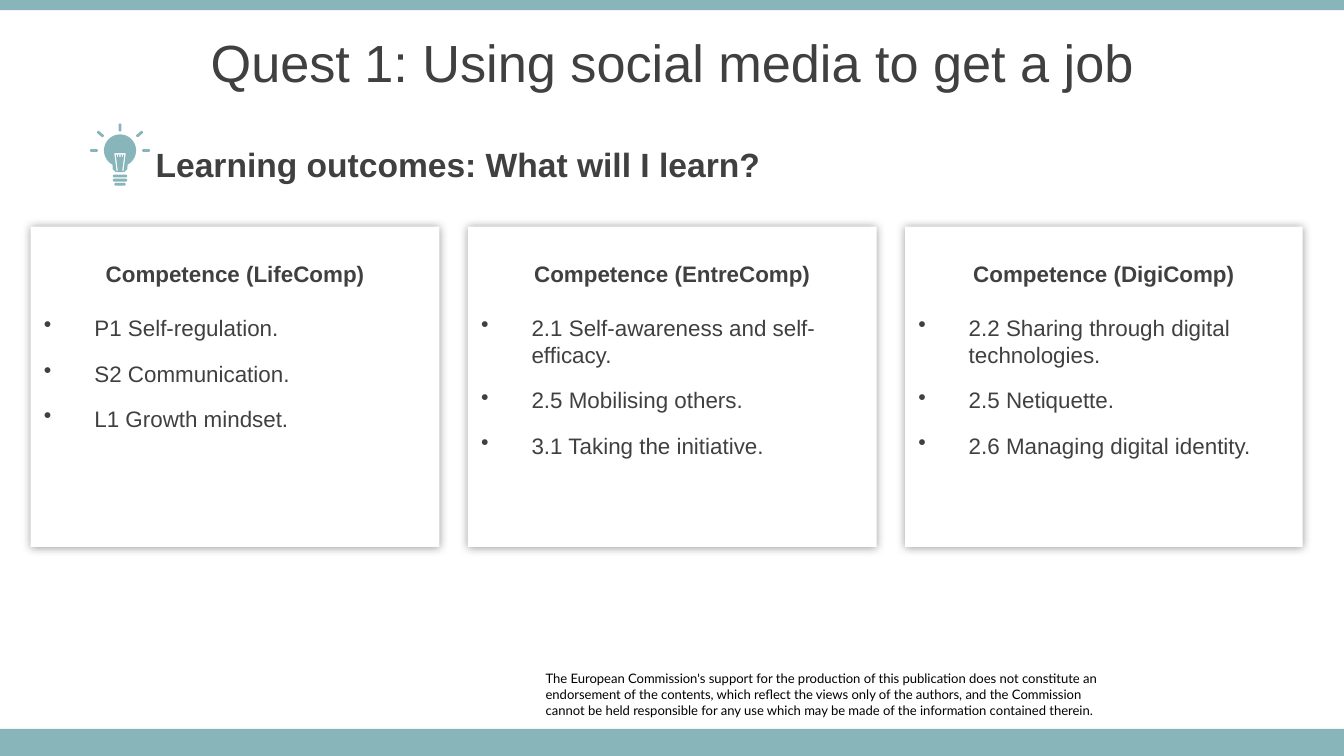
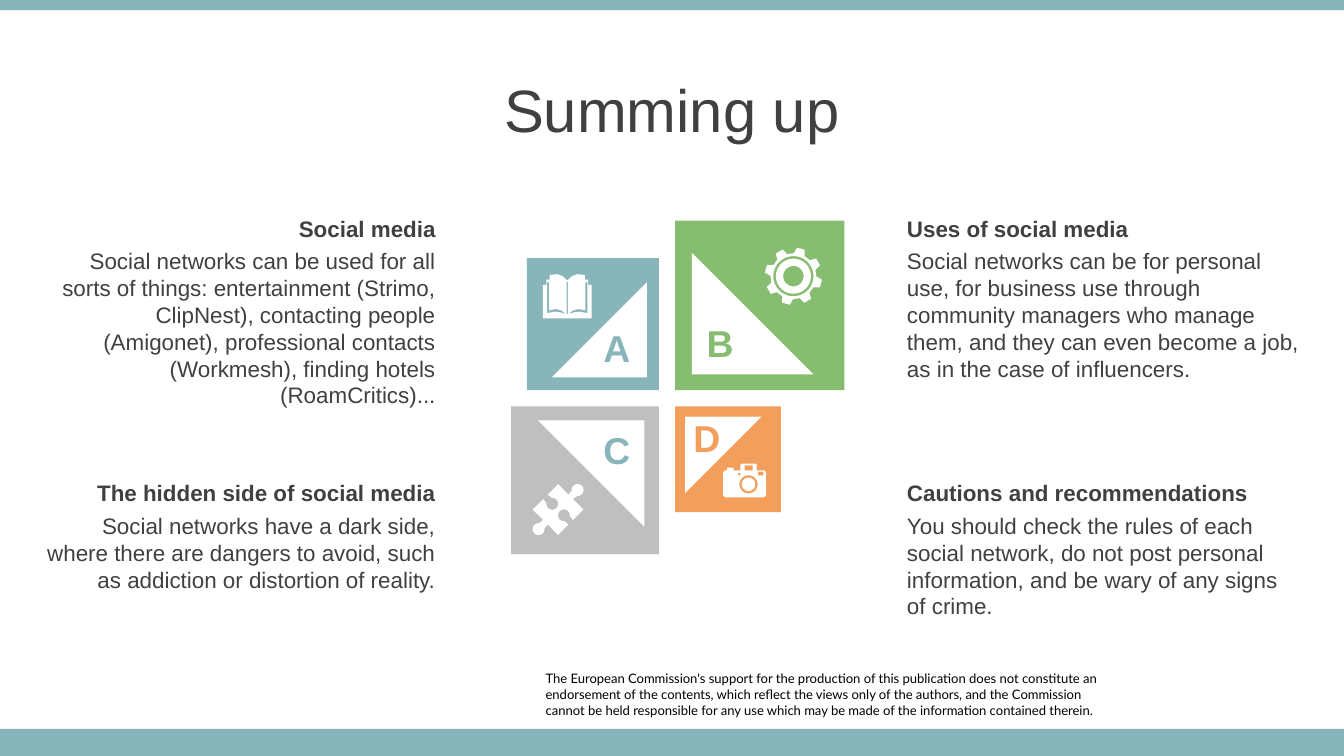
from math import cos, radians, sin

from lxml.etree import SubElement
from pptx import Presentation
from pptx.dml.color import RGBColor
from pptx.enum.shapes import MSO_SHAPE
from pptx.enum.text import MSO_ANCHOR, PP_ALIGN
from pptx.oxml.ns import qn
from pptx.util import Pt

TEAL = RGBColor(0x87, 0xB5, 0xBA)
GREEN = RGBColor(0x86, 0xBD, 0x70)
ORANGE = RGBColor(0xF3, 0x9E, 0x5A)
SILVER = RGBColor(0xBF, 0xBF, 0xBF)
WHITE = RGBColor(0xFF, 0xFF, 0xFF)
BLACK = RGBColor(0, 0, 0)
INK = RGBColor(0x40, 0x40, 0x40)


def polar(cx, cy, radius, *angles):
    """Points around a centre, angles in degrees clockwise from the right."""
    return [(cx + radius * cos(radians(a)), cy + radius * sin(radians(a))) for a in angles]


def add_icon(slide, outlines, colour):
    """One filled shape; an outline inside another one cuts a hole."""
    outlines = [[(Pt(x), Pt(y)) for x, y in outline] for outline in outlines]
    builder = slide.shapes.build_freeform(*outlines[0][0])
    for outline in outlines:
        builder.move_to(*outline[0])
        builder.add_line_segments(outline[1:], close=True)
    icon = builder.convert_to_shape()
    icon.shadow.inherit = False
    icon.fill.solid()
    icon.fill.fore_color.rgb = colour
    icon.line.fill.background()


prs = Presentation()
prs.slide_width, prs.slide_height = Pt(720), Pt(405)
layout = prs.slide_layouts[5]
for placeholder in list(layout.placeholders)[1:]:
    placeholder.element.getparent().remove(placeholder.element)

# Slides and titles
slides = []
for heading, size, top in [("Quest 1: Using social media to get a job", 28, 10),
                           ("Summing up", 32, 35.3)]:
    slide = prs.slides.add_slide(layout)
    title = slide.shapes.title
    title.left, title.top, title.width, title.height = 0, Pt(top), Pt(720), Pt(45.5)
    title.text_frame.text = heading
    title.text_frame.vertical_anchor = MSO_ANCHOR.MIDDLE
    line = title.text_frame.paragraphs[0]
    line.alignment = PP_ALIGN.CENTER
    line.font.name, line.font.size = "Arial", Pt(size)
    line.font.color.rgb = INK
    slides.append(slide)
outcomes, summary = slides

# Bands and disclaimer, shared through the layout
disclaimer = outcomes.shapes.add_textbox(Pt(292.3), Pt(359.3), Pt(300), Pt(25.2))
frame = disclaimer.text_frame
frame.word_wrap = True
frame.margin_left = frame.margin_top = frame.margin_right = frame.margin_bottom = 0
frame.text = (
    "The European Commission's support for the production of this publication does not "
    "constitute an endorsement of the contents, which reflect the views only of the authors, "
    "and the Commission\n"
    "cannot be held responsible for any use which may be made of the information "
    "contained therein.")
for line in frame.paragraphs:
    line.font.name, line.font.size = "Lato", Pt(7)
    line.font.color.rgb = BLACK
shared = [disclaimer]
for top, height in [(390.5, 14.5), (0, 5.5)]:
    band = outcomes.shapes.add_shape(MSO_SHAPE.RECTANGLE, 0, Pt(top), Pt(720), Pt(height))
    band.shadow.inherit = False
    band.fill.solid()
    band.fill.fore_color.rgb = TEAL
    band.line.fill.background()
    shared.append(band)
for part in shared:
    layout.shapes.element.append(part.element)

# Slide 1: light bulb
circle = range(0, 360, 12)
bulb_x, bulb_y = 64.3, 80.6
head = polar(bulb_x, bulb_y, 8.6, *range(118, 423, 8)) + [
    (68.3, 90.5), (66.5, 92.2), (62, 92.2), (60.3, 90.5)]
filament = [(61.2, 82.1), (62.5, 92), (63.1, 91.5), (62, 82.8)]
for x in (62.6, 64, 65.4):
    filament += [(x, 82.8), (x, 84.2), (x + 0.6, 84.2), (x + 0.6, 82.8)]
filament += [(66.6, 82.8), (65.5, 91.5), (66.1, 92), (67.4, 82.1)]
strokes = [(61.2, 94.3, 0, 6.2), (61.2, 96.5, 0, 6.2), (62, 98.7, 0, 4.6)]
for angle, distance in [(180, 12.6), (220, 12.3), (270, 10.9), (320, 12.3), (0, 12.6)]:
    strokes.append((*polar(bulb_x, bulb_y, distance, angle)[0], angle, 2.8))
bulb = [head, filament]
for x, y, angle, length in strokes:
    tip_x, tip_y = polar(x, y, length, angle)[0]
    bulb.append(polar(tip_x, tip_y, 0.75, *range(angle - 90, angle + 91, 30))
                + polar(x, y, 0.75, *range(angle + 90, angle + 271, 30)))
add_icon(outcomes, bulb, TEAL)

subheading = outcomes.shapes.add_textbox(Pt(76.3), Pt(77), Pt(351.4), Pt(22.3))
subheading.text_frame.word_wrap = True
subheading.text_frame.vertical_anchor = MSO_ANCHOR.MIDDLE
subheading.text_frame.text = "Learning outcomes: What will I learn?"
line = subheading.text_frame.paragraphs[0]
line.font.name, line.font.size, line.font.bold = "Arial", Pt(18), True
line.font.color.rgb = INK

# Slide 1: competence cards
competences = [
    ("Competence (LifeComp)", 219,
     ["P1 Self-regulation.", "S2 Communication.", "L1 Growth mindset."]),
    ("Competence (EntreComp)", 219,
     ["2.1 Self-awareness and self-efficacy.", "2.5 Mobilising others.",
      "3.1 Taking the initiative."]),
    ("Competence (DigiComp)", 213,
     ["2.2 Sharing through digital technologies.", "2.5 Netiquette.",
      "2.6 Managing digital identity."]),
]
for column, (framework, width, skills) in enumerate(competences):
    card = outcomes.shapes.add_shape(MSO_SHAPE.RECTANGLE, Pt(16.5 + 234.2 * column),
                                     Pt(121.5), Pt(width), Pt(171.5))
    card.fill.solid()
    card.fill.fore_color.rgb = WHITE
    card.line.fill.background()
    card.shadow.inherit = False
    effects = card.element.spPr.find(qn("a:effectLst"))
    glow = SubElement(effects, qn("a:outerShdw"), blurRad=str(Pt(5)), dist="0", dir="0",
                      algn="ctr", rotWithShape="0")
    tint = SubElement(glow, qn("a:srgbClr"), val="000000")
    SubElement(tint, qn("a:alpha"), val="40000")

    frame = card.text_frame
    frame.word_wrap = True
    frame.vertical_anchor = MSO_ANCHOR.TOP
    frame.margin_top = Pt(18)
    frame.text = "\n".join([framework, *skills])
    for row, line in enumerate(frame.paragraphs):
        if row == 0:
            line.alignment = PP_ALIGN.CENTER
            line.space_after = Pt(14.4)
        else:
            line.alignment = PP_ALIGN.LEFT
            line.space_after = Pt(10)
            properties = line._p.get_or_add_pPr()
            properties.set("marL", str(Pt(27)))
            properties.set("indent", str(Pt(-27)))
            SubElement(properties, qn("a:buChar"), char="•")
        line.font.name, line.font.size, line.font.bold = "Arial", Pt(12), row == 0
        line.font.color.rgb = INK

# Slide 2: four tiles around a cross-shaped gap, each with a white corner and a letter
tiles = [
    # letter, left side, upper side, size, colour, corner (x, y, size, turn), letter (x, y, colour)
    ("A", True, True, 70.7, TEAL, (295.5, 151.2, 51, 270), (314.6, 170.6, TEAL)),
    ("B", False, True, 90.7, GREEN, (370.7, 135.4, 65.2, 0), (370, 167.8, GREEN)),
    ("C", True, False, 79.2, SILVER, (288.2, 225.2, 57, 180), (314.6, 225.4, TEAL)),
    ("D", False, False, 56.7, ORANGE, (367, 223.2, 41, 90), (362.9, 218.9, ORANGE)),
]
for letter, on_left, on_top, size, colour, corner, (x, y, letter_colour) in tiles:
    left = 353 - size if on_left else 361.7
    top = 209 - size if on_top else 217.7
    for outline, (px, py, side, turn), fill in [
            (MSO_SHAPE.RECTANGLE, (left, top, size, 0), colour),
            (MSO_SHAPE.RIGHT_TRIANGLE, corner, WHITE)]:
        piece = summary.shapes.add_shape(outline, Pt(px), Pt(py), Pt(side), Pt(side))
        piece.rotation = turn
        piece.shadow.inherit = False
        piece.fill.solid()
        piece.fill.fore_color.rgb = fill
        piece.line.fill.background()
    label = summary.shapes.add_textbox(Pt(x), Pt(y), Pt(31.7), Pt(31.7))
    label.text_frame.word_wrap = True
    label.text_frame.text = letter
    line = label.text_frame.paragraphs[0]
    line.alignment = PP_ALIGN.CENTER
    line.font.name, line.font.size, line.font.bold = "Arial", Pt(20), True
    line.font.color.rgb = letter_colour

# Slide 2: book, mirrored about its spine
spine = 303.9
half_cover = [(0.3, 150), (2.5, 148), (5.5, 146.9), (9.5, 147.4), (9.5, 149.8), (11.2, 149.8),
              (11.2, 152.6), (13, 152.6), (13, 170.6)]
page_edge = [(10.8, 151.2), (9.7, 151.2), (9.7, 166.3), (6, 165.6), (3, 166.4), (0.6, 168.3),
             (3.5, 167.4), (6.5, 167), (10.8, 167.8)]
book = [[(spine + x, y) for x, y in half_cover] + [(spine - x, y) for x, y in half_cover[::-1]],
        [(spine - 0.3, 151), (spine + 0.3, 151), (spine + 0.3, 168.3), (spine - 0.3, 168.3)]]
for side in (1, -1):
    book.append([(spine + side * x, y) for x, y in page_edge])
add_icon(summary, book, WHITE)

# Slide 2: puzzle piece, with knobs on two edges and dents in the others
piece_x, piece_y = 299, 273
puzzle = []
for angle, knob in [(-45, True), (45, False), (135, True), (225, False)]:
    bulge = polar(piece_x, piece_y, 14.8 if knob else 4.4, angle)[0]
    sweep = (range(angle - 140, angle + 141, 20) if knob
             else range(angle - 40, angle - 321, -20))
    puzzle += polar(piece_x, piece_y, 13.6, angle - 45)
    puzzle += polar(piece_x, piece_y, 9.7, angle - 10)
    puzzle += polar(*bulge, 3.2, *sweep)
    puzzle += polar(piece_x, piece_y, 9.7, angle + 10)
add_icon(summary, [puzzle], WHITE)

# Slide 2: gear
gear_x, gear_y = 425.1, 148
teeth = []
for angle in range(-75, 285, 45):
    teeth += polar(gear_x, gear_y, 12.3, angle - 14)
    teeth += polar(gear_x, gear_y, 15.4, angle - 8, angle + 8)
    teeth += polar(gear_x, gear_y, 12.3, angle + 14)
add_icon(summary, [teeth] + [polar(gear_x, gear_y, r, *circle) for r in (10.8, 9.4, 5.5)], WHITE)

# Slide 2: camera
body = [(388.4, 252), (389.5, 252), (389.5, 250.6), (393.1, 250.6), (393.1, 252), (396.7, 252),
        (396.7, 248.9), (397.2, 248.4), (404.9, 248.4), (405.4, 248.9), (405.4, 252),
        (409.4, 252), (410.4, 253), (410.4, 265.4), (409.4, 266.4), (388.4, 266.4),
        (387.4, 265.4), (387.4, 253)]
camera = [body]
for left, top, right, bottom in [(398.9, 249.3, 403.2, 252), (406.1, 252.7, 409, 254.7),
                                 (395.3, 253.4, 396.7, 254.7)]:
    camera.append([(left, top), (right, top), (right, bottom), (left, bottom)])
camera += [polar(401, 259.5, r, *circle) for r in (4.9, 3.6)]
add_icon(summary, camera, WHITE)

# Slide 2: captions
captions = [
    (20.2, 111.6, 220.3, 94.3, PP_ALIGN.RIGHT, "Social media",
     "Social networks can be used for all sorts of things: entertainment (Strimo, ClipNest), "
     "contacting people (Amigonet), professional contacts (Workmesh), finding hotels "
     "(RoamCritics)..."),
    (14.4, 253.4, 226.1, 51.1, PP_ALIGN.RIGHT, "The hidden side of social media",
     "Social networks have a dark side, where there are dangers to avoid, such as addiction "
     "or distortion of reality."),
    (478.8, 111.6, 226.8, 79.9, PP_ALIGN.LEFT, "Uses of social media",
     "Social networks can be for personal use, for business use through community managers "
     "who manage them, and they can even become a job, as in the case of influencers."),
    (478.8, 253.4, 215.3, 65.5, PP_ALIGN.LEFT, "Cautions and recommendations",
     "You should check the rules of each social network, do not post personal information, "
     "and be wary of any signs of crime."),
]
for left, top, width, height, alignment, topic, details in captions:
    for text, y, box_height, bold in [(details, top + 17.3, height, False),
                                      (topic, top, 21.6, True)]:
        caption = summary.shapes.add_textbox(Pt(left), Pt(y), Pt(width), Pt(box_height))
        caption.text_frame.word_wrap = True
        caption.text_frame.text = text
        line = caption.text_frame.paragraphs[0]
        line.alignment = alignment
        line.font.name, line.font.size, line.font.bold = "Arial", Pt(12), bold
        line.font.color.rgb = INK

prs.save("out.pptx")
